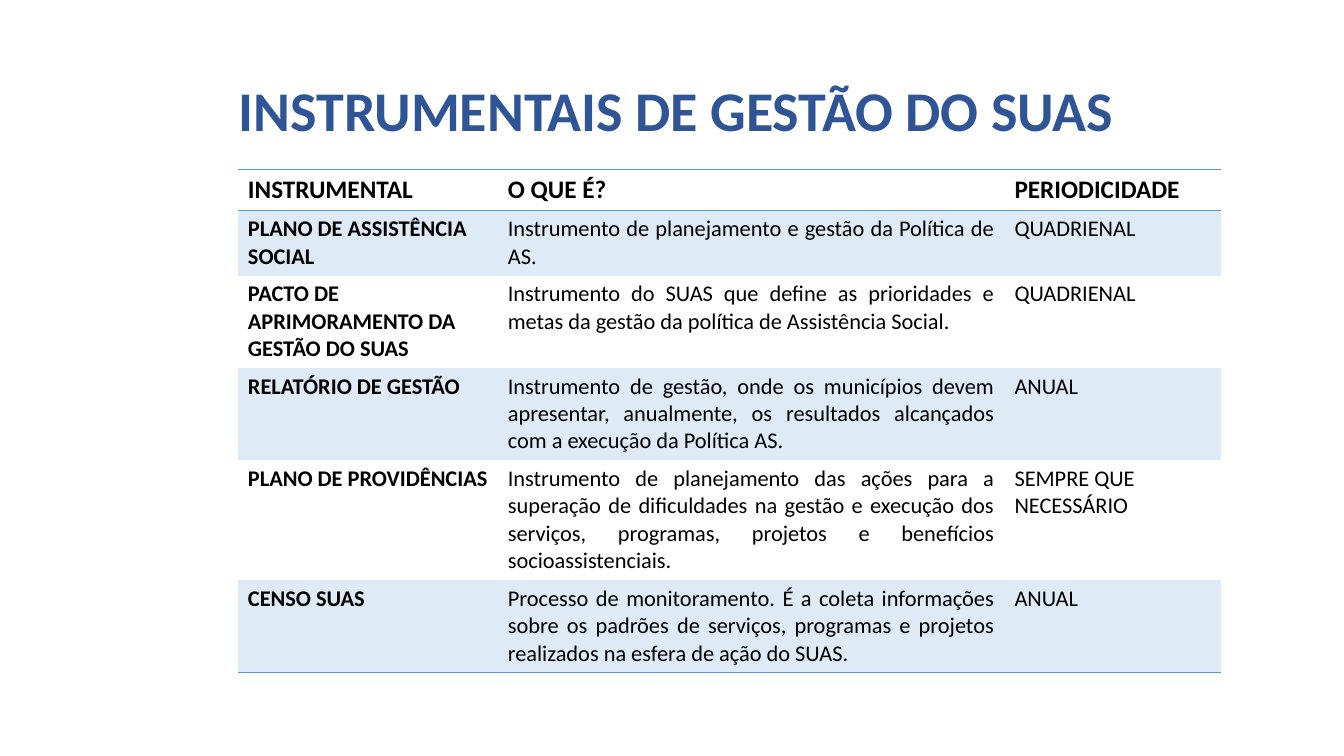
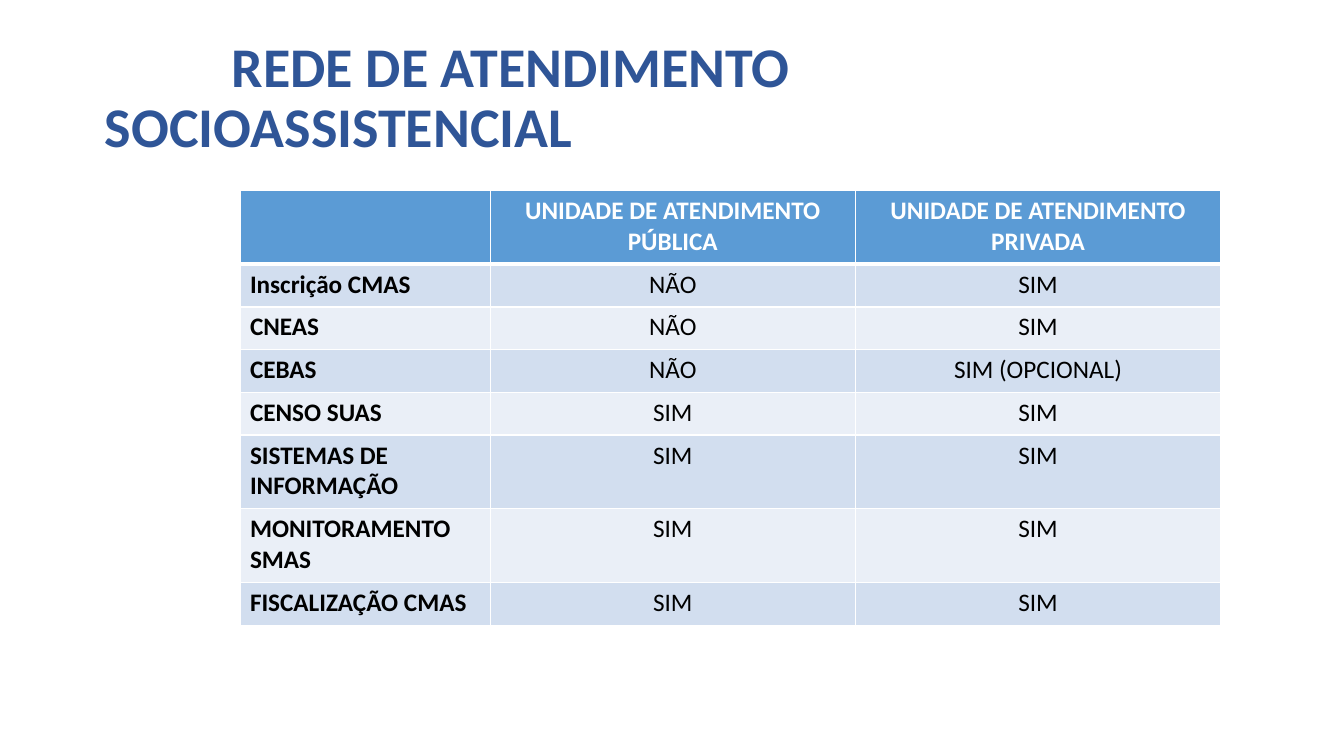
from lxml import etree
from pptx import Presentation
from pptx.dml.color import RGBColor as RGB
from pptx.enum.text import MSO_ANCHOR as ANCHOR, MSO_AUTO_SIZE as AUTO, PP_ALIGN as ALIGN
from pptx.oxml.ns import qn
from pptx.util import Inches, Pt

COLORS = {
    "title": "2F5597", "text": "000000", "white": "FFFFFF", "accent": "5B9BD5",
    "pale": "DEEBF7", "band": "D2DEEF", "light": "EAEFF7",
}
FONT = "Calibri"
W, H = Inches(13.33), Inches(7.5)
COL, ROW = W / 100, H / 100  # grid of 100 columns by 100 rows
TITLE_SIZE = (86.25, 19.33)
TITLE_INDENT = Inches(1.26)

INSTRUMENTS = [
    ("INSTRUMENTAL", "O QUE É?", "PERIODICIDADE"),
    ("PLANO DE ASSISTÊNCIA SOCIAL",
     "Instrumento de planejamento e gestão da Política de AS.", "QUADRIENAL"),
    ("PACTO DE APRIMORAMENTO DA GESTÃO DO SUAS",
     "Instrumento do SUAS que define as prioridades e metas da gestão da "
     "política de Assistência Social.", "QUADRIENAL"),
    ("RELATÓRIO DE GESTÃO",
     "Instrumento de gestão, onde os municípios devem apresentar, anualmente, "
     "os resultados alcançados com a execução da Política AS.", "ANUAL"),
    ("PLANO DE PROVIDÊNCIAS",
     "Instrumento de planejamento das ações para a superação de dificuldades na "
     "gestão e execução dos serviços, programas, projetos e benefícios "
     "socioassistenciais.", "SEMPRE QUE NECESSÁRIO"),
    ("CENSO SUAS",
     "Processo de monitoramento. É a coleta informações sobre os padrões de "
     "serviços, programas e projetos realizados na esfera de ação do SUAS.", "ANUAL"),
]
NETWORK = [
    ("", "UNIDADE DE ATENDIMENTO PÚBLICA", "UNIDADE DE ATENDIMENTO PRIVADA"),
    ("Inscrição CMAS", "NÃO", "SIM"),
    ("CNEAS", "NÃO", "SIM"),
    ("CEBAS", "NÃO", "SIM (OPCIONAL)"),
    ("CENSO SUAS", "SIM", "SIM"),
    ("SISTEMAS DE INFORMAÇÃO", "SIM", "SIM"),
    ("MONITORAMENTO SMAS", "SIM", "SIM"),
    ("FISCALIZAÇÃO CMAS", "SIM", "SIM"),
]


def write(tf, text, size=18, color="text", bold=False, align=ALIGN.LEFT):
    p = tf.paragraphs[0]
    p.alignment = align
    if text:
        r = p.add_run()
        r.text = text
        f = r.font
        f.name, f.size, f.bold = FONT, Pt(size), bold
        f.color.rgb = RGB.from_string(COLORS[color])
    return p


def add_title(s, text, left, top):
    sp = s.shapes.title
    sp.left, sp.top = int(left * COL), int(top * ROW)
    sp.width, sp.height = int(TITLE_SIZE[0] * COL), int(TITLE_SIZE[1] * ROW)
    tf = sp.text_frame
    tf.word_wrap, tf.auto_size, tf.vertical_anchor = True, AUTO.NONE, ANCHOR.MIDDLE
    p = write(tf, text, size=40, color="title", bold=True)
    p.line_spacing = 0.9
    pPr = p._p.get_or_add_pPr()
    pPr.set("marL", "0")
    pPr.set("indent", str(TITLE_INDENT))


def set_borders(cell, color, **widths):
    """Draw the sides L, R, T, B given in points; the others get no line."""
    tcPr = cell._tc.get_or_add_tcPr()
    for i, side in enumerate("LRTB"):
        ln = etree.Element(qn("a:ln" + side))
        if side in widths:
            ln.set("w", str(Pt(widths[side])))
            fill = etree.SubElement(ln, qn("a:solidFill"))
            etree.SubElement(fill, qn("a:srgbClr"), val=COLORS[color])
        else:
            ln.set("w", "0")
            etree.SubElement(ln, qn("a:noFill"))
        tcPr.insert(i, ln)


def add_table(s, data, box, col_shares, row_heights, style):
    """Fill a table; style(cell, text, row, column) formats each cell."""
    left, top, width = box
    table = s.shapes.add_table(
        len(data), len(data[0]), int(left * COL), int(top * ROW),
        int(width * COL), int(sum(row_heights) * ROW)).table
    for column, share in zip(table.columns, col_shares):
        column.width = int(width * COL * share / sum(col_shares))
    for i, (row, height) in enumerate(zip(data, row_heights)):
        table.rows[i].height = int(height * ROW)
        for j, text in enumerate(row):
            style(table.cell(i, j), text, i, j)


def set_fill(cell, color):
    cell.fill.solid()
    cell.fill.fore_color.rgb = RGB.from_string(COLORS[color])


def style_instrument(cell, text, i, j):
    if i % 2:
        set_fill(cell, "pale")
    else:
        cell.fill.background()
    last = len(INSTRUMENTS) - 1
    lines = {0: {"T": 1, "B": 1}, 1: {"T": 1}, last: {"B": 1}}
    set_borders(cell, "accent", **lines.get(i, {}))
    write(cell.text_frame, text, size=16 if i else 18, bold=i == 0 or j == 0,
          align=ALIGN.JUSTIFY if i and j == 1 else ALIGN.LEFT)


def style_network(cell, text, i, j):
    set_fill(cell, ("band" if i % 2 else "light") if i else "accent")
    set_borders(cell, "white", L=1, R=1, T=3 if i == 1 else 1, B=1 if i else 3)
    write(cell.text_frame, text, color="text" if i else "white",
          bold=i == 0 or j == 0, align=ALIGN.CENTER if j else ALIGN.LEFT)


def instruments_slide(s):
    add_title(s, "INSTRUMENTAIS DE GESTÃO DO SUAS", 7.58, 5.33)
    add_table(s, INSTRUMENTS, (17.7, 22.4, 73.15), (2.58, 5.03, 2.15),
              (5.45, 8.6, 12.2, 12.2, 15.85, 12.2), style_instrument)


def network_slide(s):
    add_title(s, "REDE DE ATENDIMENTO SOCIOASSISTENCIAL", 7.05, 3.47)
    single, double = 5.65, 9.75
    add_table(s, NETWORK, (17.85, 25.2, 72.98), (2.48, 3.62, 3.62),
              (double, *[single] * 4, double, double, single), style_network)


def main():
    prs = Presentation()
    prs.slide_width, prs.slide_height = W, H
    for build in (instruments_slide, network_slide):
        build(prs.slides.add_slide(prs.slide_layouts[5]))
    prs.save("out.pptx")


if __name__ == "__main__":
    main()
